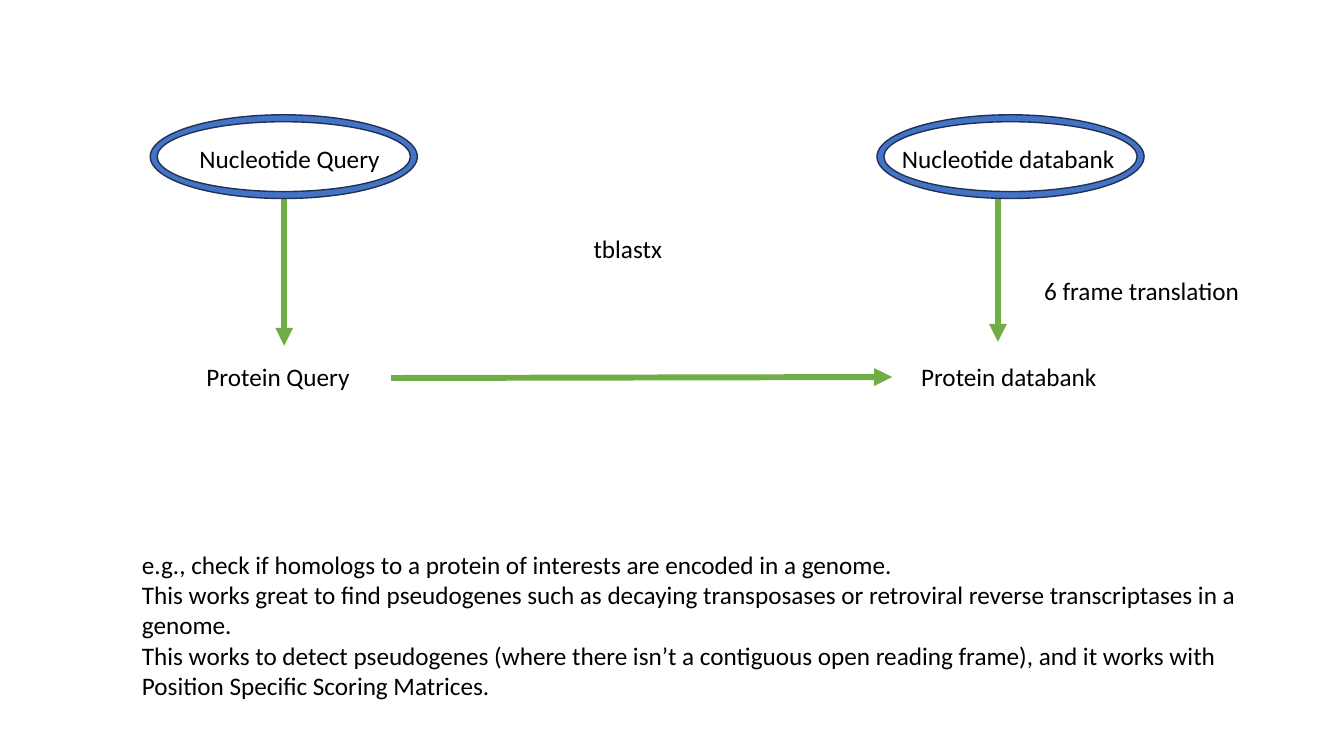
from lxml.etree import SubElement
from pptx import Presentation
from pptx.dml.color import RGBColor
from pptx.enum.shapes import MSO_CONNECTOR as Connector, MSO_SHAPE as Shape
from pptx.enum.text import MSO_AUTO_SIZE as AutoSize
from pptx.oxml.ns import qn
from pptx.util import Pt

BLACK = RGBColor(0x00, 0x00, 0x00)
GREEN = RGBColor(0x70, 0xAD, 0x47)
BLUE = RGBColor(0x44, 0x72, 0xC4)
NAVY = RGBColor(0x1E, 0x32, 0x56)

FONT_FORMAT = {"name": "Calibri", "size": Pt(18)}
LABEL_HEIGHT = 28.8
RING_TOP, RING_WIDTH, RING_HEIGHT = 82, 190.8, 59.8
RING_LEFTS = (107.3, 626.4)

LABELS = [
    ("Nucleotide databank", 637.2, 98.6, 168.5),
    ("Protein databank", 650.9, 254.9, 141.1),
    ("Nucleotide Query", 135.4, 98.6, 149),
    ("Protein Query", 140.4, 254.9, 123.8),
    ("tblastx", 416.9, 163.4, 69.8),
    ("6 frame translation", 738.7, 193, 155.5),
]
ARROWS = [
    (279.4, 270, 637.2, 269.3),
    (712.8, 138.2, 712.8, 244.1),
    (203, 141.8, 203, 247),
]
USES = [
    [
        "e.g., check if homologs to a protein of interests are encoded in a genome.",
        "This works great to find pseudogenes such as decaying transposases or "
        "retroviral reverse transcriptases in a genome.",
    ],
    [
        "This works to detect pseudogenes (where there isn’t a contiguous open "
        "reading frame), and it works with Position Specific Scoring Matrices.",
    ],
]


def add_text(slide, paragraphs, left, top, width, height, wrap=False):
    frame = slide.shapes.add_textbox(Pt(left), Pt(top), Pt(width), Pt(height)).text_frame
    frame.word_wrap = wrap
    frame.auto_size = AutoSize.SHAPE_TO_FIT_TEXT
    for index, lines in enumerate(paragraphs):
        paragraph = frame.add_paragraph() if index else frame.paragraphs[0]
        for line_index, line in enumerate(lines):
            if line_index:
                paragraph.add_line_break()
            run = paragraph.add_run()
            run.text = line
            for key, value in FONT_FORMAT.items():
                setattr(run.font, key, value)
            run.font.color.rgb = BLACK


def add_arrow(slide, *ends):
    arrow = slide.shapes.add_connector(Connector.STRAIGHT, *map(Pt, ends))
    arrow.line.color.rgb = GREEN
    arrow.line.width = Pt(4.25)
    SubElement(arrow.line._get_or_add_ln(), qn("a:tailEnd"), type="triangle")
    SubElement(arrow._element.spPr, qn("a:effectLst"))


def add_ring(slide, left):
    ring = slide.shapes.add_shape(
        Shape.DONUT, Pt(left), Pt(RING_TOP), Pt(RING_WIDTH), Pt(RING_HEIGHT)
    )
    ring.adjustments[0] = 0.083
    ring.shadow.inherit = False
    ring.fill.solid()
    ring.fill.fore_color.rgb = BLUE
    ring.line.color.rgb = NAVY
    ring.line.width = Pt(1)


def main():
    presentation = Presentation()
    presentation.slide_width, presentation.slide_height = Pt(960), Pt(540)
    slide = presentation.slides.add_slide(presentation.slide_layouts[6])
    for label, left, top, width in LABELS:
        add_text(slide, [[label]], left, top, width, LABEL_HEIGHT)
    add_text(slide, USES, 94.3, 388.8, 819.4, 116.6, wrap=True)
    for ends in ARROWS:
        add_arrow(slide, *ends)
    for left in RING_LEFTS:
        add_ring(slide, left)
    presentation.save("out.pptx")


if __name__ == "__main__":
    main()
